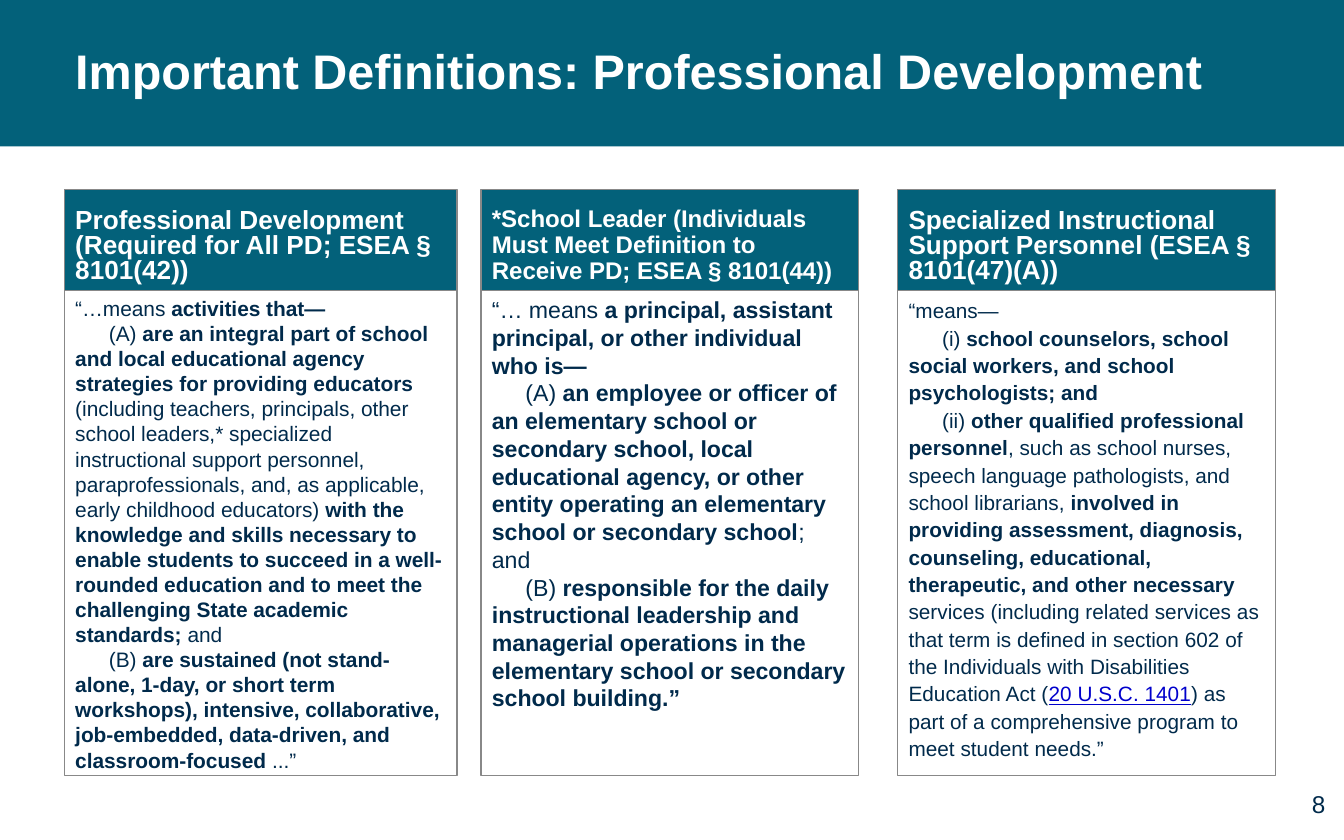
import pptx
import pptx.dml.color
import pptx.enum.shapes
import pptx.enum.text
import pptx.util
from pptx.util import Inches

COLORS = {"teal": "03617A", "navy": "002A4B", "white": "FFFFFF",
          "border": "888888", "link": "0000CC"}
ANCHOR = pptx.enum.text.MSO_ANCHOR
ALIGN = pptx.enum.text.PP_ALIGN

# Body paragraphs are lists of (text, style); style is "", "bold" or "link".
COLUMNS = [
    {
        "left": 0.48, "width": 2.92,
        "heading": "Professional Development (Required for All PD; ESEA § 8101(42))",
        "heading_size": 14, "heading_spacing": 0.8,
        "body_size": 11.2, "body_spacing": 1.0,
        "body": [
            [("“…means ", ""), ("activities that—", "bold")],
            [("(A) ", ""),
             ("are an integral part of school and local educational agency "
              "strategies for providing educators ", "bold"),
             ("(including teachers, principals, other school leaders,* specialized "
              "instructional support personnel, paraprofessionals, and, as "
              "applicable, early childhood educators) ", ""),
             ("with the knowledge and skills necessary to enable students to "
              "succeed in a well-rounded education and to meet the challenging "
              "State academic standards; ", "bold"),
             ("and", "")],
            [("(B) ", ""),
             ("are sustained (not stand-alone, 1-day, or short term workshops), "
              "intensive, collaborative, job-embedded, data-driven, and "
              "classroom-focused", "bold"),
             (" ...”", "")],
        ],
    },
    {
        "left": 3.58, "width": 2.81,
        "heading": "*School Leader (Individuals Must Meet Definition to Receive PD; "
                   "ESEA § 8101(44))",
        "heading_size": 12.9, "heading_spacing": 0.9,
        "body_size": 12.4, "body_spacing": 1.0,
        "body": [
            [("“… means ", ""),
             ("a principal, assistant principal, or other individual who is—", "bold")],
            [("(A) ", ""),
             ("an employee or officer of an elementary school or secondary school, "
              "local educational agency, or other entity operating an elementary "
              "school or secondary school", "bold"),
             ("; and", "")],
            [("(B) ", ""),
             ("responsible for the daily instructional leadership and managerial "
              "operations in the elementary school or secondary school building.”",
              "bold")],
        ],
    },
    {
        "left": 6.68, "width": 2.81,
        "heading": "Specialized Instructional Support Personnel (ESEA § 8101(47)(A))",
        "heading_size": 14, "heading_spacing": 0.8,
        "body_size": 11.1, "body_spacing": 1.1,
        "body": [
            [("“means—", "")],
            [("(i) ", ""),
             ("school counselors, school social workers, and school psychologists; "
              "and", "bold")],
            [("(ii) ", ""),
             ("other qualified professional personnel", "bold"),
             (", such as school nurses, speech language pathologists, and school "
              "librarians, ", ""),
             ("involved in providing assessment, diagnosis, counseling, educational, "
              "therapeutic, and other necessary ", "bold"),
             ("services (including related services as that term is defined in "
              "section 602 of the Individuals with Disabilities Education Act (", ""),
             ("20 U.S.C. 1401", "link"),
             (") as part of a comprehensive program to meet student needs.”", "")],
        ],
    },
]


def rgb(name):
    return pptx.dml.color.RGBColor.from_string(COLORS[name])


def add_rectangle(slide, left, top, width, height, fill=None, line=None):
    shape = slide.shapes.add_shape(
        pptx.enum.shapes.MSO_SHAPE.RECTANGLE,
        Inches(left), Inches(top), Inches(width), Inches(height))
    shape.shadow.inherit = False
    if fill:
        shape.fill.solid()
        shape.fill.fore_color.rgb = rgb(fill)
    else:
        shape.fill.background()
    if line:
        shape.line.color.rgb = rgb(line)
        shape.line.width = pptx.util.Pt(0.75)
    else:
        shape.line.fill.background()
    return shape


def set_frame(shape, anchor, inset_x=0.08, inset_y=0.04):
    frame = shape.text_frame
    frame.word_wrap = True
    frame.vertical_anchor = anchor
    frame.margin_left = frame.margin_right = Inches(inset_x)
    frame.margin_top = frame.margin_bottom = Inches(inset_y)
    return frame


def style_paragraph(paragraph, size, color, bold=None, spacing=1.0, align=ALIGN.LEFT):
    paragraph.alignment = align
    paragraph.line_spacing = spacing
    paragraph.font.name = "Arial"
    paragraph.font.size = pptx.util.Pt(size)
    paragraph.font.color.rgb = rgb(color)
    paragraph.font.bold = bold


def add_runs(paragraph, runs):
    for text, style in runs:
        run = paragraph.add_run()
        run.text = text
        if style == "bold":
            run.font.bold = True
        elif style == "link":
            run.font.underline = True
            run.font.color.rgb = rgb("link")


def add_title_band(slide, width, height):
    band = add_rectangle(slide, 0, 0, width, height, fill="teal")
    frame = set_frame(band, ANCHOR.MIDDLE)
    frame.margin_left = Inches(0.56)
    paragraph = frame.paragraphs[0]
    paragraph.text = "Important Definitions: Professional Development"
    style_paragraph(paragraph, 26, "white", bold=True, spacing=0.9)


def add_definition(slide, column, top, height, heading_height=0.75):
    """Place a heading box with its definition box right below."""
    left, width = column["left"], column["width"]
    heading = add_rectangle(slide, left, top, width, heading_height, "teal", "border")
    paragraph = set_frame(heading, ANCHOR.BOTTOM).paragraphs[0]
    paragraph.text = column["heading"]
    style_paragraph(paragraph, column["heading_size"], "white", bold=True,
                    spacing=column["heading_spacing"])
    paragraph.space_before = pptx.util.Pt(6)

    body = add_rectangle(slide, left, top + heading_height, width,
                         height - heading_height, line="border")
    frame = set_frame(body, ANCHOR.TOP)
    for index, runs in enumerate(column["body"]):
        paragraph = frame.add_paragraph() if index else frame.paragraphs[0]
        style_paragraph(paragraph, column["body_size"], "navy",
                        spacing=column["body_spacing"])
        if index:
            properties = paragraph._p.get_or_add_pPr()
            properties.set("marL", "0")
            properties.set("indent", str(Inches(0.25)))
        add_runs(paragraph, runs)


def add_page_number(slide, left, top, width, height):
    box = slide.shapes.add_textbox(
        Inches(left), Inches(top), Inches(width), Inches(height))
    paragraph = set_frame(box, ANCHOR.TOP, 0.1, 0.1).paragraphs[0]
    paragraph.text = "8"
    style_paragraph(paragraph, 13, "navy", align=ALIGN.RIGHT)


def main():
    presentation = pptx.Presentation()
    presentation.slide_width = Inches(10)
    presentation.slide_height = Inches(6.25)
    slide = presentation.slides.add_slide(presentation.slide_layouts[6])
    add_title_band(slide, 10, 1.09)
    for column in COLUMNS:
        add_definition(slide, column, top=1.41, height=4.36)
    add_page_number(slide, 9.36, 5.77, 0.6, 0.48)
    presentation.save("out.pptx")


if __name__ == "__main__":
    main()
